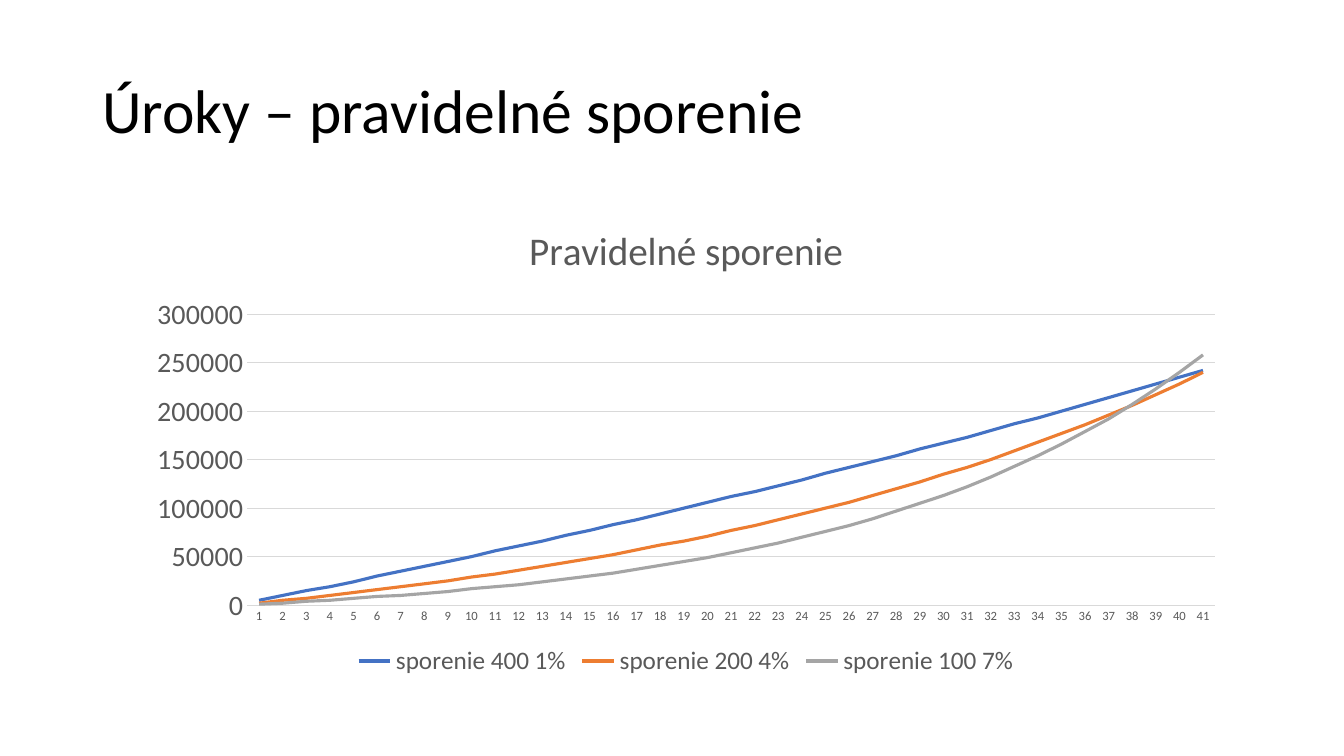
"""Build a slide with a line chart comparing three regular savings plans."""
from dataclasses import dataclass

from pptx import Presentation
from pptx.chart.axis import CategoryAxis, ValueAxis
from pptx.chart.chart import Chart
from pptx.chart.data import CategoryChartData
from pptx.dml.color import RGBColor
from pptx.dml.line import LineFormat
from pptx.enum.chart import XL_CHART_TYPE, XL_LEGEND_POSITION, XL_TICK_MARK
from pptx.enum.text import MSO_ANCHOR, PP_ALIGN
from pptx.slide import Slide
from pptx.text.text import Font
from pptx.util import Pt

FONT = "Calibri"
BLACK = RGBColor(0x00, 0x00, 0x00)
GRAY = RGBColor(0x59, 0x59, 0x59)
GRID = RGBColor(0xD9, 0xD9, 0xD9)
BLUE = RGBColor(0x44, 0x72, 0xC4)
ORANGE = RGBColor(0xED, 0x7D, 0x31)
SILVER = RGBColor(0xA5, 0xA5, 0xA5)
YEARS = range(1, 42)


@dataclass(frozen=True)
class Plan:
    """A monthly deposit growing at a yearly rate in percent."""

    deposit: int
    percent: int
    color: RGBColor

    @property
    def name(self) -> str:
        """Return the legend entry."""
        return f"sporenie {self.deposit} {self.percent}%"

    def balance(self, year: int) -> int:
        """Return the balance after a year, rounded to thousands."""
        rate = self.percent / 100
        return int(round(12 * self.deposit * ((1 + rate) ** year - 1) / rate, -3))


PLANS = [Plan(400, 1, BLUE), Plan(200, 4, ORANGE), Plan(100, 7, SILVER)]


def style_font(font: Font, size: float, color: RGBColor) -> None:
    """Set the typeface, size and colour."""
    font.name = FONT
    font.size = Pt(size)
    font.bold = False
    font.color.rgb = color


def style_line(line: LineFormat, width: float, color: RGBColor) -> None:
    """Set the width and colour of a line."""
    line.width = Pt(width)
    line.color.rgb = color


def style_axis(axis: CategoryAxis | ValueAxis, size: float) -> None:
    """Remove tick marks and format the labels."""
    axis.major_tick_mark = XL_TICK_MARK.NONE
    axis.minor_tick_mark = XL_TICK_MARK.NONE
    style_font(axis.tick_labels.font, size, GRAY)


def add_title(s: Slide, text: str) -> None:
    """Place and fill the title placeholder."""
    sp = s.shapes.title
    sp.left, sp.top, sp.width, sp.height = Pt(66), Pt(28.8), Pt(828), Pt(104.4)
    tf = sp.text_frame
    tf.vertical_anchor = MSO_ANCHOR.MIDDLE
    p = tf.paragraphs[0]
    p.alignment = PP_ALIGN.LEFT
    p.line_spacing = 0.9
    r = p.add_run()
    r.text = text
    style_font(r.font, 44, BLACK)


def format_chart(chart: Chart, title: str) -> None:
    """Format the chart title, legend, axes and series."""
    style_font(chart.font, 10, BLACK)
    r = chart.chart_title.text_frame.paragraphs[0].add_run()
    r.text = title
    style_font(r.font, 28, GRAY)
    chart.chart_title.include_in_layout = False

    chart.has_legend = True
    chart.legend.position = XL_LEGEND_POSITION.BOTTOM
    chart.legend.include_in_layout = False
    style_font(chart.legend.font, 18, GRAY)

    style_axis(chart.category_axis, 9)
    style_line(chart.category_axis.format.line, 0.75, GRID)
    values = chart.value_axis
    style_axis(values, 20)
    values.minimum_scale, values.maximum_scale, values.major_unit = 0, 300000, 50000
    values.format.line.fill.background()
    style_line(values.major_gridlines.format.line, 0.75, GRID)

    plot = chart.plots[0]
    plot.vary_by_categories = False
    for plan, series in zip(PLANS, plot.series):
        series.smooth = False
        style_line(series.format.line, 2.25, plan.color)


def add_savings_chart(s: Slide) -> None:
    """Add the chart of balances by year."""
    data = CategoryChartData()
    data.categories = [str(year) for year in YEARS]
    for plan in PLANS:
        data.add_series(plan.name, [plan.balance(year) for year in YEARS])
    frame = s.shapes.add_chart(
        XL_CHART_TYPE.LINE, Pt(96.5), Pt(144), Pt(787), Pt(342.7), data
    )
    format_chart(frame.chart, "Pravidelné sporenie")


def main() -> None:
    """Build and save the presentation."""
    prs = Presentation()
    prs.slide_width, prs.slide_height = Pt(960), Pt(540)
    s = prs.slides.add_slide(prs.slide_layouts.get_by_name("Title Only"))
    add_title(s, "Úroky – pravidelné sporenie")
    add_savings_chart(s)
    prs.save("out.pptx")


if __name__ == "__main__":
    main()
